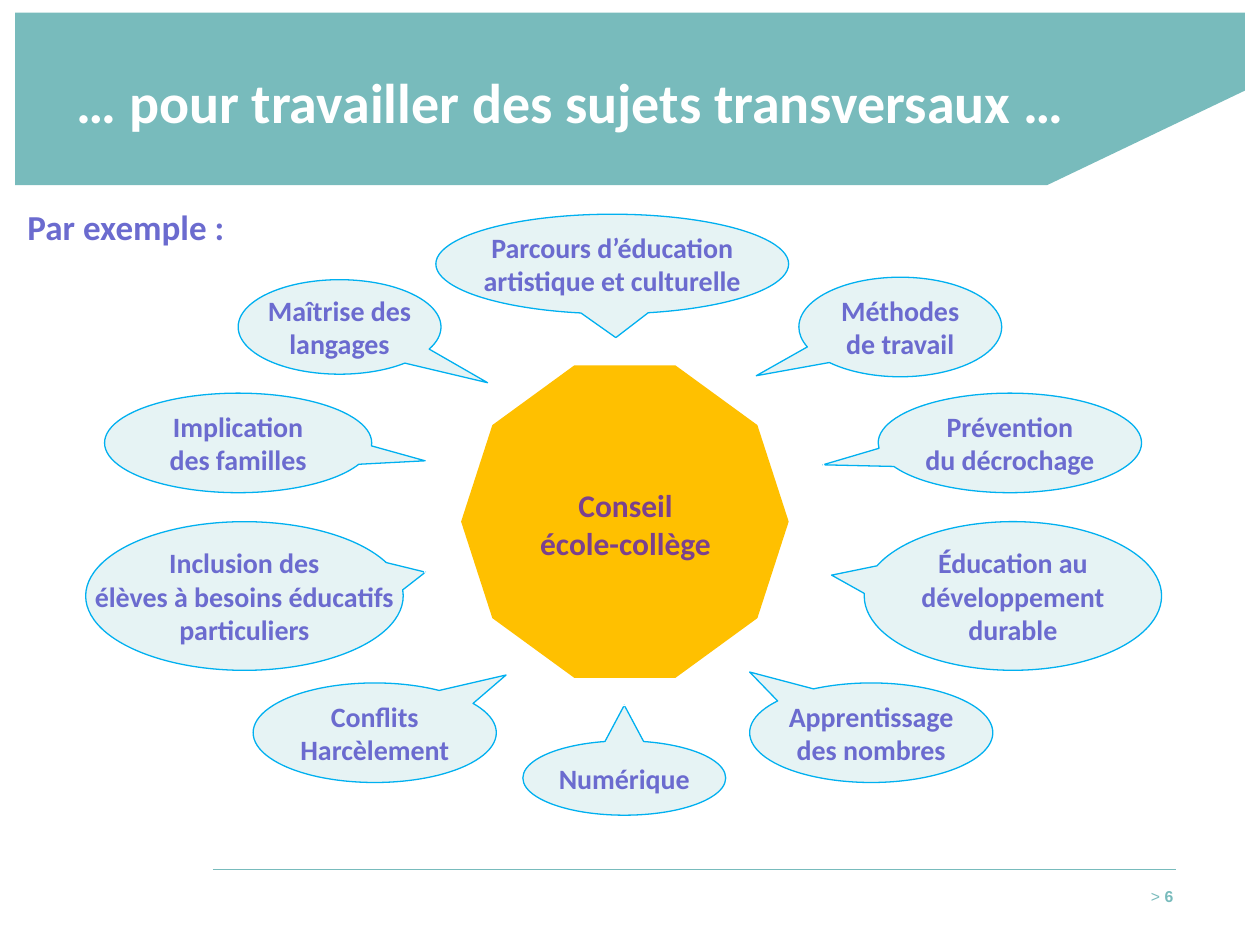
from copy import deepcopy

from pptx import Presentation
from pptx.dml.color import RGBColor
from pptx.enum.shapes import MSO_CONNECTOR, MSO_SHAPE
from pptx.enum.text import MSO_ANCHOR as Anchor, PP_ALIGN as Align
from pptx.oxml.ns import qn
from pptx.util import Inches, Pt

COLORS = {
    "teal": "78BBBC",
    "white": "FFFFFF",
    "violet": "6B6BCF",
    "purple": "7B418E",
    "gold": "FFC000",
    "pale": "E6F3F4",
    "blue": "00B0F0",
}

TOPICS = [
    ("Maîtrise des\nlangages", (1.89, 2.22, 1.61, 0.75), (0.73, 0.59)),
    ("Parcours d’éducation\nartistique et culturelle", (3.46, 1.7, 2.8, 0.79), (0.01, 0.74)),
    ("Méthodes\nde travail", (6.34, 2.2, 1.61, 0.79), (-0.71, 0.49)),
    ("Implication\ndes familles", (0.83, 3.12, 2.12, 0.79), (0.7, 0.18)),
    ("Prévention\ndu décrochage", (6.97, 3.12, 2.09, 0.79), (-0.71, 0.22)),
    ("Inclusion des\nélèves à besoins éducatifs\nparticuliers", (0.68, 4.14, 2.52, 1.18), (0.57, -0.16)),
    ("Éducation au\ndéveloppement\ndurable", (6.86, 4.14, 2.36, 1.18), (-0.61, -0.14)),
    ("Conflits\nHarcèlement", (2.01, 5.42, 1.93, 0.79), (0.54, -0.58)),
    ("Apprentissage\ndes nombres", (5.95, 5.42, 1.93, 0.79), (-0.5, -0.61)),
    ("Numérique", (4.15, 5.88, 1.61, 0.59), (0, -0.98)),
]


def color(name):
    return RGBColor.from_string(COLORS[name])


def inches(box):
    return [Inches(length) for length in box]


def style_shape(shape, fill=None, line=None):
    shape.shadow.inherit = False
    if fill:
        shape.fill.solid()
        shape.fill.fore_color.rgb = color(fill)
    else:
        shape.fill.background()
    if line:
        shape.line.color.rgb = color(line)
        shape.line.width = Pt(0.75)
    else:
        shape.line.fill.background()


def write_text(paragraph, text, size=16, font="Calibri", fill="violet", bold=True, align=Align.LEFT):
    paragraph.alignment = align
    for index, line in enumerate(text.split("\n")):
        if index:
            paragraph.add_line_break()
        run = paragraph.add_run()
        run.text = line
        run.font.size = Pt(size)
        run.font.name = font
        run.font.bold = bold
        run.font.color.rgb = color(fill)
    for line_break in paragraph._p.findall(qn("a:br")):
        line_break.append(deepcopy(run.font._element))


def add_text_box(slide, box, anchor=Anchor.TOP):
    frame = slide.shapes.add_textbox(*inches(box)).text_frame
    frame.word_wrap = True
    frame.vertical_anchor = anchor
    return frame


def add_banner(slide, box):
    left, top, width, height = box
    right, bottom = left + width, top + height
    builder = slide.shapes.build_freeform(Inches(right), Inches(top))
    corners = [(left, top), (left, bottom), (right - 1.57, bottom), (right, top + 0.62)]
    builder.add_line_segments([inches(corner) for corner in corners])
    style_shape(builder.convert_to_shape(), fill="teal")
    title = add_text_box(slide, (left + 0.39, top + 0.03, 8.99, height - 0.03), Anchor.MIDDLE)
    write_text(title.paragraphs[0], "… pour travailler des sujets transversaux …", size=32, fill="white")


def add_footer(slide, box):
    left, top, width, height = box
    right = left + width
    rule = slide.shapes.add_connector(MSO_CONNECTOR.STRAIGHT, *inches((left, top, right, top)))
    rule.line.color.rgb = color("teal")
    rule.line.width = Pt(0.75)
    properties = rule._element.spPr
    properties.append(properties.makeelement(qn("a:effectLst"), {}))
    number = add_text_box(slide, (right - 0.94, top + 0.09, 1.02, height - 0.09)).paragraphs[0]
    for text, bold in (("> ", False), ("6", True)):
        write_text(number, text, size=9, font="Arial", fill="teal", bold=bold, align=Align.RIGHT)


def add_topic(slide, box, text, tip):
    callout = slide.shapes.add_shape(MSO_SHAPE.OVAL_CALLOUT, *inches(box))
    callout.adjustments[0], callout.adjustments[1] = tip
    style_shape(callout, fill="pale", line="blue")
    frame = callout.text_frame
    frame.margin_left = frame.margin_right = frame.margin_top = frame.margin_bottom = 0
    frame.word_wrap = False
    frame.vertical_anchor = Anchor.MIDDLE
    write_text(frame.paragraphs[0], text, align=Align.CENTER)


def add_council(slide, box):
    left, top, width, height = box
    decagon = slide.shapes.add_shape(MSO_SHAPE.DECAGON, *inches(box))
    style_shape(decagon, fill="gold")
    frame = add_text_box(slide, (left + 0.27, top + 0.91, 2.07, 0.71))
    write_text(frame.paragraphs[0], "Conseil", size=18, fill="purple", align=Align.CENTER)
    write_text(frame.add_paragraph(), "école-collège", size=18, fill="purple", align=Align.CENTER)
    ring = slide.shapes.add_shape(
        MSO_SHAPE.OVAL, *inches((left - 0.35, top - 0.21, width + 0.71, height + 0.43))
    )
    style_shape(ring, line="white")


def main():
    presentation = Presentation()
    presentation.slide_width, presentation.slide_height = Inches(10), Inches(7.5)
    slide = presentation.slides.add_slide(presentation.slide_layouts[6])
    add_banner(slide, (0.12, 0.1, 9.76, 1.37))
    add_footer(slide, (1.69, 6.9, 7.64, 0.59))
    for text, box, tip in TOPICS:
        add_topic(slide, box, text, tip)
    add_council(slide, (3.66, 2.9, 2.6, 2.48))
    intro = add_text_box(slide, (0.12, 1.58, 2.2, 0.44))
    write_text(intro.paragraphs[0], "Par exemple :", size=20)
    presentation.save("out.pptx")


if __name__ == "__main__":
    main()
